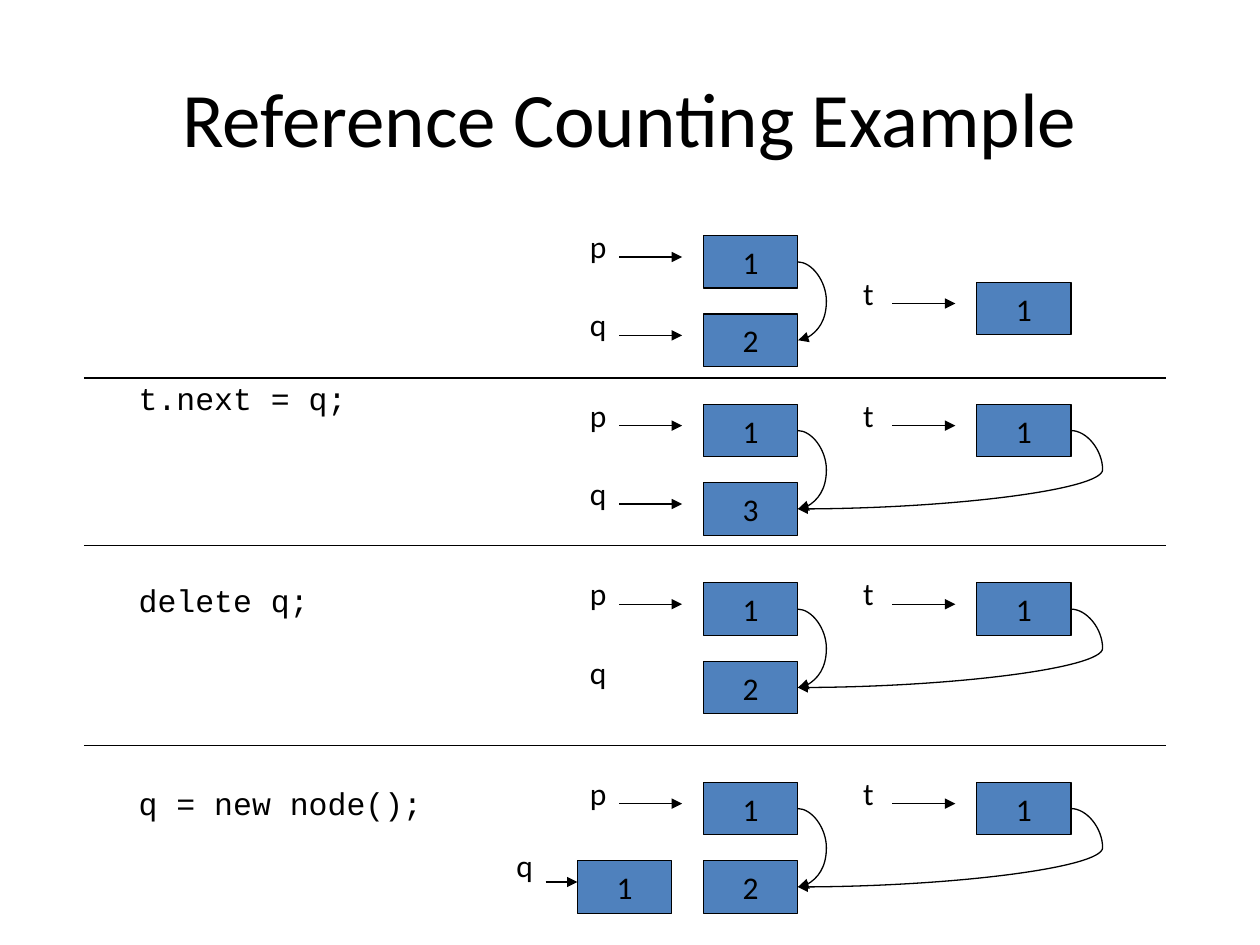
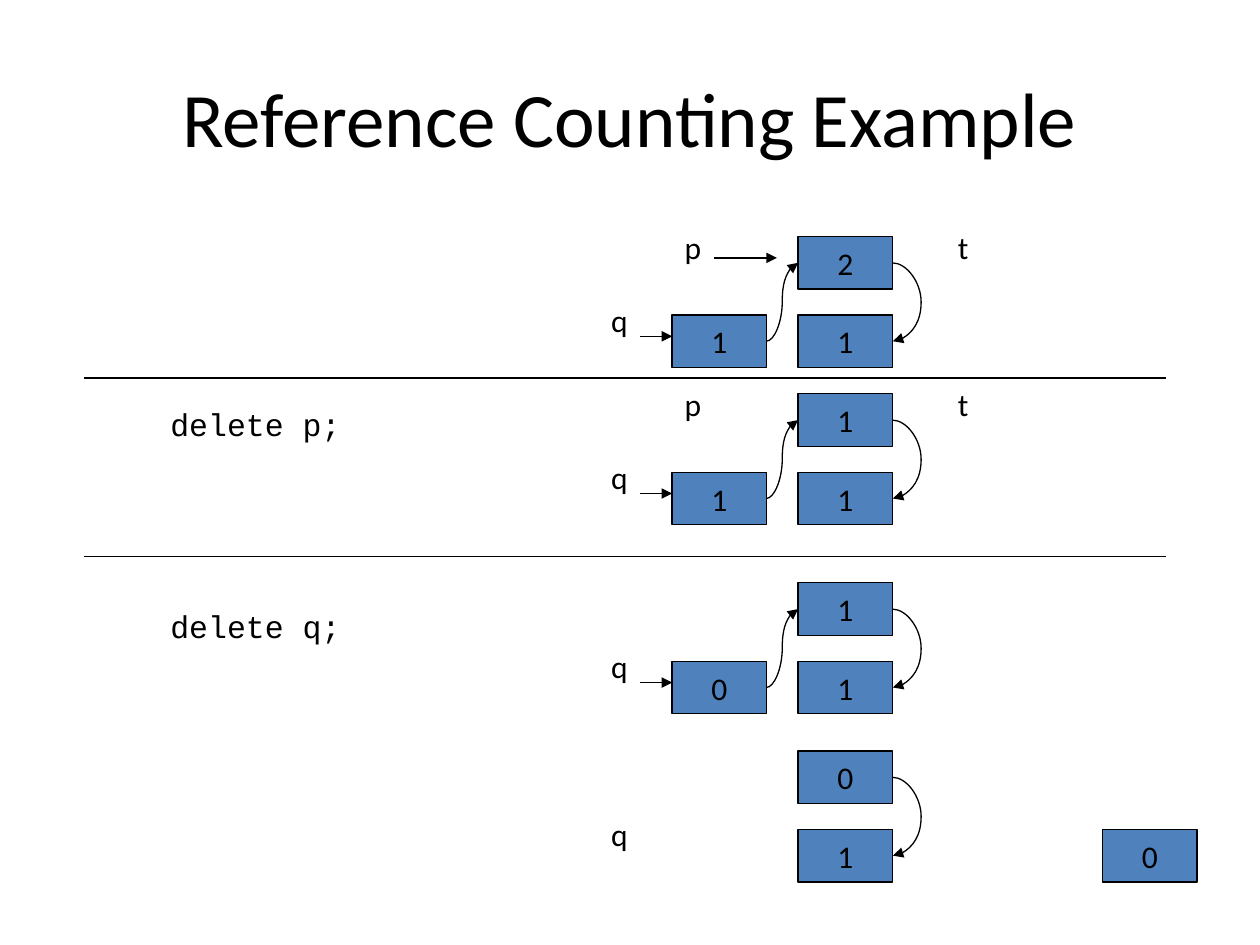
from dataclasses import dataclass
from enum import Enum

import pptx
import pptx.dml.color
import pptx.enum.shapes
import pptx.enum.text
import pptx.oxml
import pptx.oxml.ns
import pptx.util
from pptx.util import Cm, Pt


@dataclass(frozen=True)
class Theme:
    ink: pptx.dml.color.RGBColor = pptx.dml.color.RGBColor(0, 0, 0)
    node_fill: pptx.dml.color.RGBColor = pptx.dml.color.RGBColor(0x4F, 0x81, 0xBD)
    font: str = "Calibri"
    code_font: str = "Courier New"
    title_size: float = 44
    text_size: float = 18
    line_width: float = 0.75


THEME = Theme()
CONNECTOR = pptx.enum.shapes.MSO_CONNECTOR

# Lengths below are in centimetres
NODE_WIDTH, NODE_HEIGHT = 1.9, 1.06
COLUMN_BULGE, RIGHT_BULGE = 0.58, 0.64  # how far a link swings out past its node
LABEL_TO_ARROW = 0.84


class Slot(Enum):
    """Place of a node, measured from the upper node of its row."""
    UPPER = (0, 0)
    LOWER = (0, 1.58)
    LEFT = (-2.54, 1.58)
    RIGHT = (5.51, 0)
    RIGHT_MIDDLE = (5.51, 0.94)
    FAR = (6.14, 1.58)


@dataclass(frozen=True)
class Reach:
    """Label offset from the node, and the length of the arrow."""
    label_dx: float
    label_dy: float
    arrow_length: float


LONG = Reach(-2.54, -0.3, 1.27)
SHORT = Reach(-1.48, -0.41, 0.64)


@dataclass(frozen=True)
class Pointer:
    name: str
    slot: Slot
    reach: Reach = LONG
    has_arrow: bool = True


@dataclass(frozen=True)
class HeapRow:
    top: float
    counts: dict[Slot, str]
    pointers: tuple[Pointer, ...]
    left_is_linked: bool = False


@dataclass(frozen=True)
class CodeBlock:
    left: float
    top: float
    width: float
    height: float
    inset: float
    statements: tuple[str, ...]


@dataclass(frozen=True)
class Example:
    code: CodeBlock
    column: float  # left edge of the upper and lower nodes
    dividers: tuple[float, ...]
    rows: tuple[HeapRow, ...]


P = Pointer("p", Slot.UPPER)
Q = Pointer("q", Slot.LOWER)
T = Pointer("t", Slot.RIGHT)
P_GONE = Pointer("p", Slot.UPPER, has_arrow=False)
Q_GONE = Pointer("q", Slot.LOWER, has_arrow=False)
T_GONE = Pointer("t", Slot.RIGHT, has_arrow=False)
Q_LEFT = Pointer("q", Slot.LEFT, SHORT)
Q_LEFT_GONE = Pointer("q", Slot.LEFT, SHORT, has_arrow=False)

EXAMPLES = (
    Example(
        CodeBlock(1.27, 4.45, 22.86, 12.57, 3.19,
                  ("t.next = q;", "delete q;", "q = new node();")),
        column=14.18,
        dividers=(7.62, 11.0, 15.03),
        rows=(
            HeapRow(4.75, {Slot.UPPER: "1", Slot.LOWER: "2", Slot.RIGHT_MIDDLE: "1"},
                    (P, Q, Pointer("t", Slot.RIGHT_MIDDLE))),
            HeapRow(8.15, {Slot.UPPER: "1", Slot.LOWER: "3", Slot.RIGHT: "1"}, (P, Q, T)),
            HeapRow(11.75, {Slot.UPPER: "1", Slot.LOWER: "2", Slot.RIGHT: "1"}, (P, Q_GONE, T)),
            HeapRow(15.77, {Slot.UPPER: "1", Slot.LOWER: "2", Slot.RIGHT: "1", Slot.LEFT: "1"},
                    (P, Q_LEFT, T)),
        ),
    ),
    Example(
        CodeBlock(1.91, 8.05, 21.59, 8.89, 0.11, ("delete p;", "delete q;")),
        column=16.09,
        dividers=(7.62, 11.22),
        rows=(
            HeapRow(4.77, {Slot.UPPER: "2", Slot.LOWER: "1", Slot.LEFT: "1"},
                    (P, Q_LEFT, T_GONE), left_is_linked=True),
            HeapRow(7.94, {Slot.UPPER: "1", Slot.LOWER: "1", Slot.LEFT: "1"},
                    (P_GONE, Q_LEFT, T_GONE), left_is_linked=True),
            HeapRow(11.75, {Slot.UPPER: "1", Slot.LOWER: "1", Slot.LEFT: "0"},
                    (Q_LEFT,), left_is_linked=True),
            HeapRow(15.14, {Slot.UPPER: "0", Slot.LOWER: "1", Slot.FAR: "0"}, (Q_LEFT_GONE,)),
        ),
    ),
)


def format_text(paragraph, size: float = THEME.text_size, font: str = THEME.font) -> None:
    for run in paragraph.runs:
        run.font.size = Pt(size)
        run.font.name = font
        run.font.color.rgb = THEME.ink


def add_line(slide, kind, x1: float, y1: float, x2: float, y2: float, arrow: bool = True):
    line = slide.shapes.add_connector(kind, Cm(x1), Cm(y1), Cm(x2), Cm(y2))
    line.line.color.rgb = THEME.ink
    line.line.width = Pt(THEME.line_width)
    properties = line._element.spPr
    if arrow:
        outline = line.line._get_or_add_ln()
        outline.append(pptx.oxml.parse_xml(
            f'<a:tailEnd {pptx.oxml.ns.nsdecls("a")} type="triangle"/>'))
    properties.append(pptx.oxml.parse_xml(f'<a:effectLst {pptx.oxml.ns.nsdecls("a")}/>'))
    return line


def add_link(slide, x1: float, y1: float, x2: float, y2: float, bend_x: float) -> None:
    """Curved arrow that turns at bend_x."""
    link = add_line(slide, CONNECTOR.CURVE, x1, y1, x2, y2)
    bend = round((bend_x - x1) / (x2 - x1) * 100000)
    guides = link._element.spPr.prstGeom.get_or_add_avLst()
    guides.append(pptx.oxml.parse_xml(
        f'<a:gd {pptx.oxml.ns.nsdecls("a")} name="adj1" fmla="val {bend}"/>'))


def add_node(slide, left: float, top: float, count: str) -> None:
    node = slide.shapes.add_shape(pptx.enum.shapes.MSO_SHAPE.RECTANGLE, Cm(left), Cm(top),
                                  Cm(NODE_WIDTH), Cm(NODE_HEIGHT))
    node.shadow.inherit = False
    node.fill.solid()
    node.fill.fore_color.rgb = THEME.node_fill
    node.line.color.rgb = THEME.ink
    node.line.width = Pt(THEME.line_width)
    frame = node.text_frame
    frame.text = count
    frame.word_wrap = False
    frame.vertical_anchor = pptx.enum.text.MSO_ANCHOR.MIDDLE
    frame.paragraphs[0].alignment = pptx.enum.text.PP_ALIGN.CENTER
    format_text(frame.paragraphs[0])


def add_pointer(slide, pointer: Pointer, column: float, row_top: float) -> None:
    dx, dy = pointer.slot.value
    reach = pointer.reach
    left, top = column + dx + reach.label_dx, row_top + dy
    width = 0.74 if pointer.name == "t" else 0.94
    label = slide.shapes.add_textbox(Cm(left), Cm(top + reach.label_dy), Cm(width), Cm(1.27))
    frame = label.text_frame
    frame.text = pointer.name
    frame.word_wrap = False
    frame.auto_size = pptx.enum.text.MSO_AUTO_SIZE.SHAPE_TO_FIT_TEXT
    format_text(frame.paragraphs[0])
    if pointer.has_arrow:
        start, level = left + LABEL_TO_ARROW, top + 0.43
        add_line(slide, CONNECTOR.STRAIGHT, start, level, start + reach.arrow_length, level)


def add_row(slide, row: HeapRow, column: float) -> None:
    for slot, count in row.counts.items():
        dx, dy = slot.value
        add_node(slide, column + dx, row.top + dy, count)
    for pointer in row.pointers:
        add_pointer(slide, pointer, column, row.top)

    # Links between nodes
    right = column + NODE_WIDTH
    upper = row.top + NODE_HEIGHT / 2
    lower = upper + Slot.LOWER.value[1]
    add_link(slide, right, upper, right + 0.01, lower, right + COLUMN_BULGE)
    if Slot.RIGHT in row.counts:
        start = right + Slot.RIGHT.value[0]
        add_link(slide, start, upper, right, lower, start + RIGHT_BULGE)
    if row.left_is_linked:
        start = right + Slot.LEFT.value[0]
        add_link(slide, start, lower, column, upper, (start + column) / 2)


def set_title(slide) -> None:
    title = slide.shapes.title
    title.left, title.top, title.width, title.height = Cm(1.27), Cm(0.76), Cm(22.86), Cm(3.18)
    title.text_frame.text = "Reference Counting Example"
    title.text_frame.vertical_anchor = pptx.enum.text.MSO_ANCHOR.MIDDLE
    title.text_frame.paragraphs[0].alignment = pptx.enum.text.PP_ALIGN.CENTER
    format_text(title.text_frame.paragraphs[0], THEME.title_size)


def set_code(slide, code: CodeBlock) -> None:
    body = slide.placeholders[1]
    body.left, body.top = Cm(code.left), Cm(code.top)
    body.width, body.height = Cm(code.width), Cm(code.height)
    frame = body.text_frame
    frame.text = "\n".join(code.statements)
    frame.auto_size = pptx.enum.text.MSO_AUTO_SIZE.NONE
    frame.margin_top = Cm(code.inset)
    for index, statement in enumerate(frame.paragraphs):
        statement.level = 1
        statement.space_before = Pt(94 if index else 0)
        properties = statement._p.get_or_add_pPr()
        properties.set("marL", str(Cm(2.06)))
        properties.set("indent", str(Cm(-0.79)))
        properties.append(pptx.oxml.parse_xml(f'<a:buNone {pptx.oxml.ns.nsdecls("a")}/>'))
        format_text(statement, font=THEME.code_font)


def main() -> None:
    deck = pptx.Presentation()
    deck.slide_width, deck.slide_height = Cm(25.4), Cm(19.05)
    for example in EXAMPLES:
        slide = deck.slides.add_slide(deck.slide_layouts[1])
        set_title(slide)
        set_code(slide, example.code)
        for level in example.dividers:
            add_line(slide, CONNECTOR.STRAIGHT, 1.69, level, 23.5, level, arrow=False)
        for row in example.rows:
            add_row(slide, row, example.column)
    deck.save("out.pptx")


if __name__ == "__main__":
    main()
